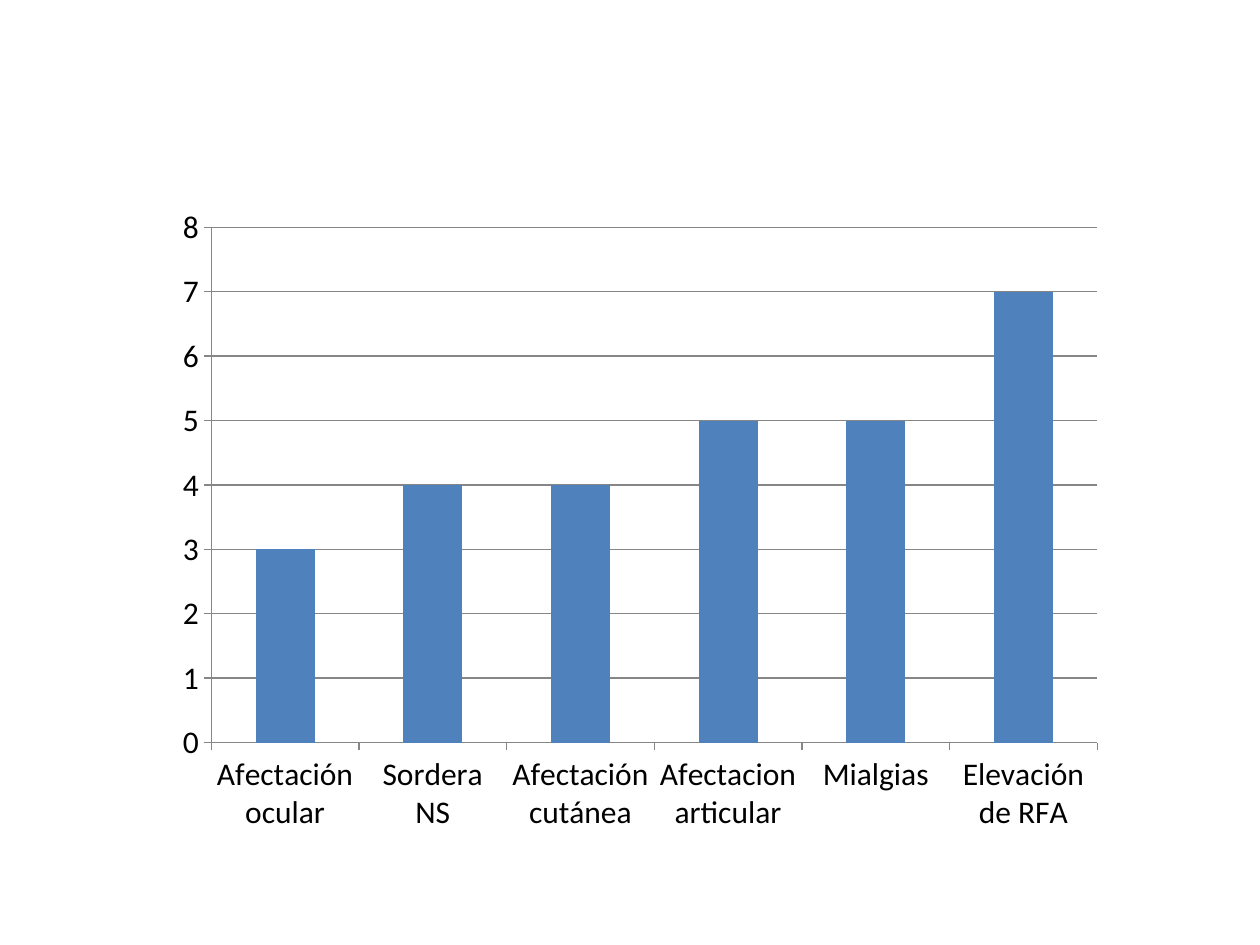
"""Build a slide with a column chart of clinical findings by number of patients."""
from pptx import Presentation
from pptx.chart.data import CategoryChartData
from pptx.dml.color import RGBColor
from pptx.enum.chart import XL_CHART_TYPE as ChartType, XL_TICK_MARK as TickMark
from pptx.util import Inches, Pt

BLUE = RGBColor(0x4F, 0x81, 0xBD)
GRAY = RGBColor(0x86, 0x86, 0x86)
BLACK = RGBColor(0x00, 0x00, 0x00)

FINDINGS = {
    "Afectación ocular": 3,
    "Sordera NS": 4,
    "Afectación cutánea": 4,
    "Afectacion articular": 5,
    "Mialgias": 5,
    "Elevación de RFA": 7,
}

deck = Presentation()
deck.slide_width = Inches(10)
deck.slide_height = Inches(7.5)
slide = deck.slides.add_slide(deck.slide_layouts[6])

findings_data = CategoryChartData()
findings_data.categories = list(FINDINGS)
findings_data.add_series("Series 1", list(FINDINGS.values()))

findings = slide.shapes.add_chart(
    ChartType.COLUMN_CLUSTERED,
    Inches(1.3), Inches(1.55), Inches(7.56), Inches(5.15),
    findings_data,
).chart
findings.has_title = False
findings.has_legend = False
findings.font.name = "Calibri"
findings.font.size = Pt(18)
findings.font.color.rgb = BLACK

columns = findings.plots[0]
columns.vary_by_categories = False
columns.gap_width = 150
patients = columns.series[0]
patients.format.fill.solid()
patients.format.fill.fore_color.rgb = BLUE

counts = findings.value_axis
counts.minimum_scale = 0
counts.maximum_scale = 8
counts.major_unit = 1
counts.has_major_gridlines = True

for axis in (findings.category_axis, counts):
    axis.major_tick_mark = TickMark.OUTSIDE
    axis.minor_tick_mark = TickMark.NONE

for line in (findings.category_axis.format.line, counts.format.line,
             counts.major_gridlines.format.line):
    line.color.rgb = GRAY
    line.width = Pt(0.75)

deck.save("out.pptx")
